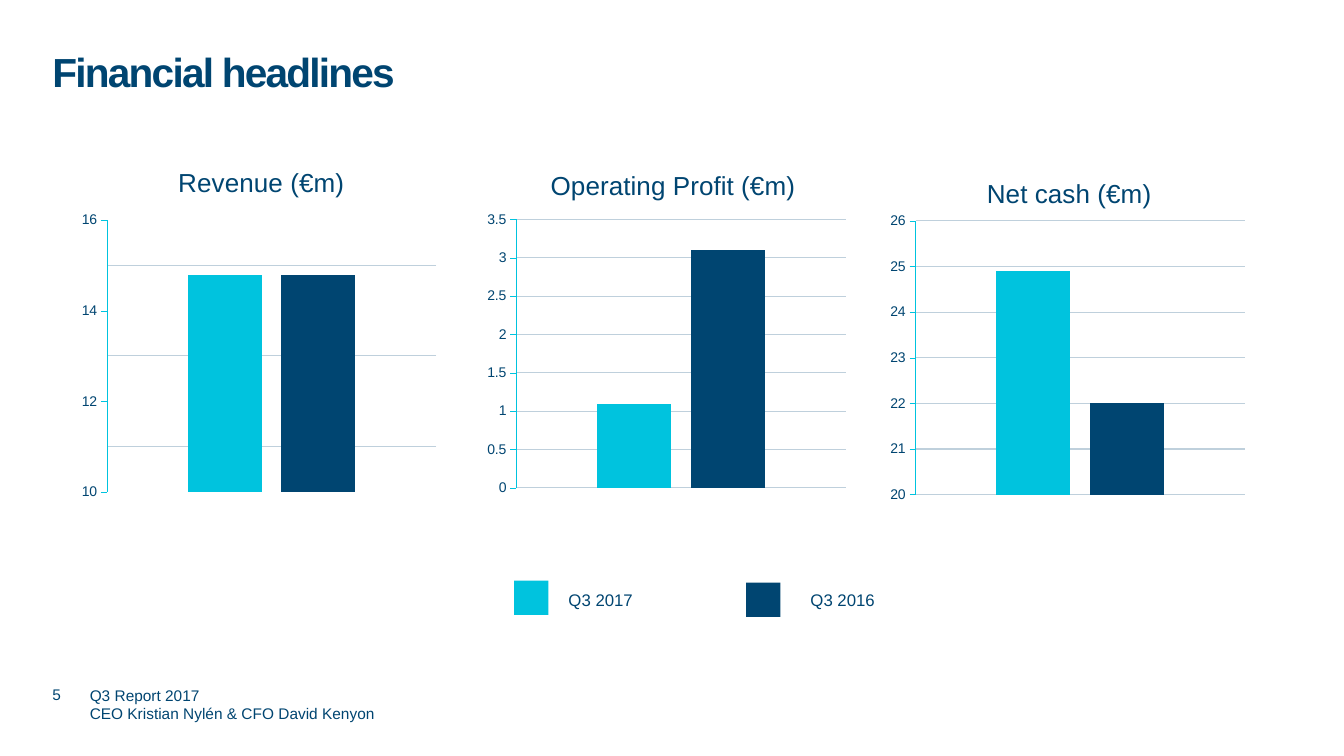
from lxml import etree
from pptx import Presentation, util as u
from pptx.chart.data import CategoryChartData
from pptx.dml.color import RGBColor
from pptx.enum import chart as ch, shapes, text
from pptx.oxml.ns import qn

HUES = {"navy": "004571", "cyan": "00C3DE", "grid": "BFD0DC"}
FONT = "Arial"
CELL = u.Inches(1)  # grid of one-inch columns and rows


def hue(name):
    return RGBColor.from_string(HUES[name])


def grid(*cells):
    return [round(n * CELL) for n in cells]


def style(font, size, bold=False):
    font.name, font.size, font.bold = FONT, u.Pt(size), bold
    font.color.rgb = hue("navy")


def fill_text(frame, lines, size, anchor, inset=True, bold=False):
    frame.word_wrap = True
    frame.auto_size = text.MSO_AUTO_SIZE.NONE
    frame.vertical_anchor = anchor
    if not inset:
        frame.margin_left = frame.margin_right = 0
        frame.margin_top = frame.margin_bottom = 0
    for i, line in enumerate(lines):
        para = frame.add_paragraph() if i else frame.paragraphs[0]
        para.alignment = text.PP_ALIGN.LEFT
        run = para.add_run()
        run.text = line
        style(run.font, size, bold)


def label(slide, box, lines, size, anchor=text.MSO_ANCHOR.TOP, inset=True):
    frame = slide.shapes.add_textbox(*grid(*box)).text_frame
    fill_text(frame, lines, size, anchor, inset)


def head(slide, box, line):
    title = slide.shapes.title
    title.left, title.top, title.width, title.height = grid(*box)
    frame = title.text_frame
    fill_text(frame, [line], 29, text.MSO_ANCHOR.TOP, False, True)
    para = frame.paragraphs[0]
    para.line_spacing = 0.9
    para.runs[0].font._element.set("spc", "-130")


def lay_out(part, index, **shares):
    """Place a chart part by shares of the chart's size."""
    for old in part.findall(qn("c:layout")):
        part.remove(old)
    layout = etree.Element(qn("c:layout"))
    part.insert(index, layout)
    manual = etree.SubElement(layout, qn("c:manualLayout"))
    modes = {"xMode": "edge", "yMode": "edge"}
    if "w" in shares:
        modes = {"layoutTarget": "inner", **modes}
    for tag, val in {**modes, **shares}.items():
        etree.SubElement(manual, qn("c:" + tag)).set("val", str(val))


def bars(slide, box, name, spot, vals, low, high, step, minor=None):
    data = CategoryChartData()
    data.categories = ["1"]
    for i, val in enumerate(vals, 1):
        data.add_series(f"Series {i}", [val])
    kind = ch.XL_CHART_TYPE.COLUMN_CLUSTERED
    chart = slide.shapes.add_chart(kind, *grid(*box), data).chart
    style(chart.font, 10)
    chart.has_legend = False

    chart.has_title = True
    title = chart.chart_title
    run = title.text_frame.paragraphs[0].add_run()
    run.text = name
    style(run.font, 18.6)
    lay_out(title._element, 1, x=spot[0], y=spot[1])
    area = chart._chartSpace.find(".//" + qn("c:plotArea"))
    lay_out(area, 0, x=0.09, y=0.19, w=0.89, h=0.77)

    plot = chart.plots[0]
    plot.gap_width, plot.overlap, plot.vary_by_categories = 219, -27, False
    for series, tone in zip(plot.series, ("cyan", "navy")):
        series.format.fill.solid()
        series.format.fill.fore_color.rgb = hue(tone)

    chart.category_axis.visible = False
    axis = chart.value_axis
    axis.minimum_scale, axis.maximum_scale, axis.major_unit = low, high, step
    axis.major_tick_mark = ch.XL_TICK_MARK.OUTSIDE
    axis.minor_tick_mark = ch.XL_TICK_MARK.NONE
    axis.format.line.color.rgb = hue("cyan")
    axis.format.line.width = u.Pt(0.25)
    axis.has_major_gridlines = True
    rule = axis.major_gridlines.format.line
    rule.color.rgb = hue("grid")
    rule.width = u.Pt(0.75)
    if minor:  # keep the styled gridlines, at minor steps only
        axis.minor_unit = minor
        lines = axis._element.find(qn("c:majorGridlines"))
        lines.tag = qn("c:minorGridlines")


def key(slide, box, gap, drop, name, tone):
    """Draw a legend square with its label beside it."""
    left, top, side = box
    mark = slide.shapes.add_shape(
        shapes.MSO_SHAPE.RECTANGLE, *grid(left, top, side, side))
    mark.shadow.inherit = False
    mark.fill.solid()
    mark.fill.fore_color.rgb = hue(tone)
    mark.line.fill.background()
    label(slide, (left + side + gap, top + drop, 1.17, 0.3), [name], 12)


def foot(slide, box):
    left, base, width = box
    low, row = text.MSO_ANCHOR.BOTTOM, 0.21
    label(slide, (left, base - 0.19 - row, 0.37, row), ["5"], 11, low, False)
    lines = ["Q3 Report 2017", "CEO Kristian Nylén & CFO David Kenyon"]
    label(slide, (left + 0.37, base - row, width, row), lines, 11, low, False)


def main():
    deck = Presentation()
    deck.slide_width, deck.slide_height = grid(13.33, 7.5)
    slide = deck.slides.add_slide(deck.slide_layouts[5])
    head(slide, (0.52, 0.52, 10.5, 0.37), "Financial headlines")
    top, wide = 1.52, 3.67
    bars(slide, (0.73, top, wide, 3.5), "Revenue (€m)", (0.27, 0.02),
         (14.8, 14.8), 10, 16, 2, 1)
    bars(slide, (4.79, top, wide, 3.46), "Operating Profit (€m)",
         (0.17, 0.03), (1.1, 3.1), 0, 3.5, 0.5)
    bars(slide, (8.75, top, wide, 3.53), "Net cash (€m)", (0.27, 0.05),
         (24.9, 22), 20, 26, 1)
    key(slide, (5.1, 5.76, 0.34), 0.1, 0.04, "Q3 2017", "cyan")
    key(slide, (7.4, 5.78, 0.34), 0.2, 0.02, "Q3 2016", "navy")
    foot(slide, (0.52, 7.17, 5.25))
    deck.save("out.pptx")


if __name__ == "__main__":
    main()
